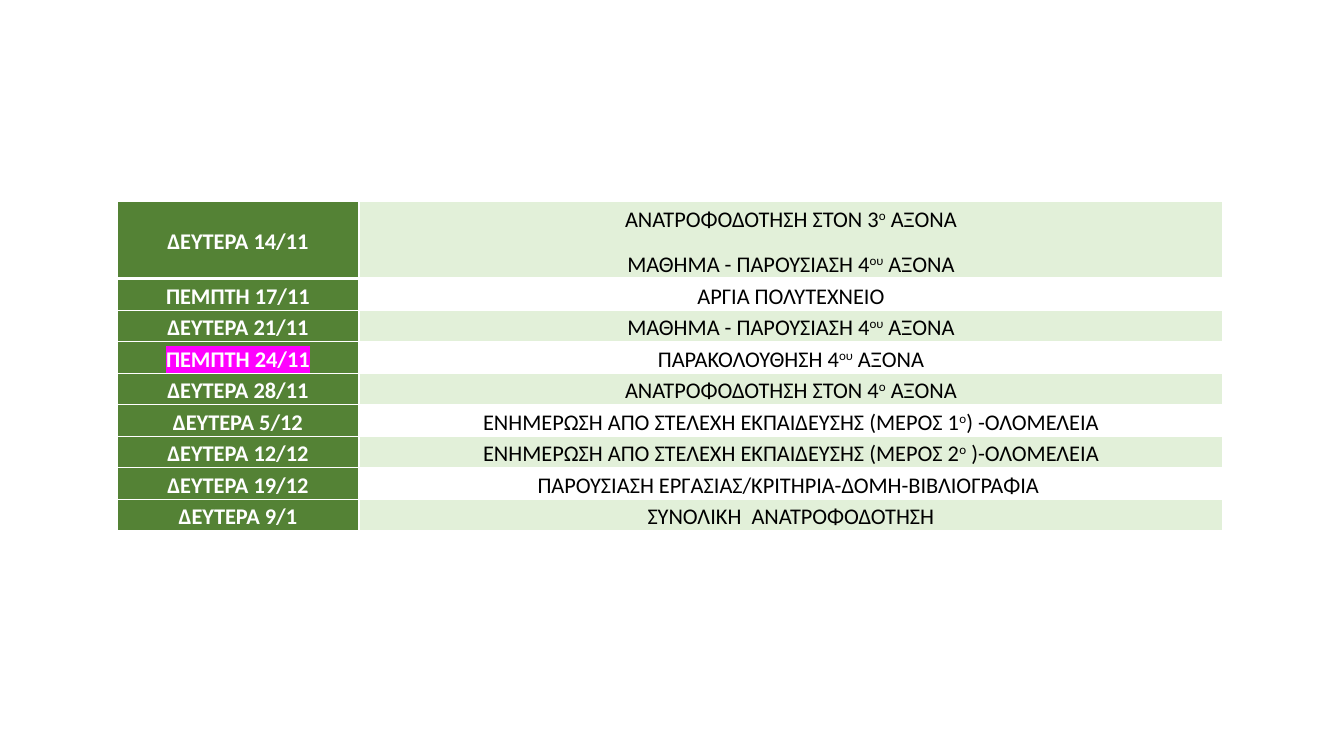
from pptx import Presentation
from pptx.dml.color import RGBColor
from pptx.enum.text import MSO_ANCHOR, PP_ALIGN
from pptx.oxml import parse_xml
from pptx.oxml.ns import nsdecls
from pptx.util import Inches, Pt

# Date, then the lines of the activity; text between ^ marks is superscript
SCHEDULE = [
    ("ΔΕΥΤΕΡΑ 14/11", ["ΑΝΑΤΡΟΦΟΔΟΤΗΣΗ ΣΤΟΝ 3^ο^ ΑΞΟΝΑ", "ΜΑΘΗΜΑ - ΠΑΡΟΥΣΙΑΣΗ 4^ου^ ΑΞΟΝΑ"]),
    ("ΠΕΜΠΤΗ 17/11", ["ΑΡΓΙΑ ΠΟΛΥΤΕΧΝΕΙΟ"]),
    ("ΔΕΥΤΕΡΑ 21/11", ["ΜΑΘΗΜΑ - ΠΑΡΟΥΣΙΑΣΗ 4^ου^ ΑΞΟΝΑ"]),
    ("ΠΕΜΠΤΗ 24/11", ["ΠΑΡΑΚΟΛΟΥΘΗΣΗ 4^ου^ ΑΞΟΝΑ"]),
    ("ΔΕΥΤΕΡΑ 28/11", ["ΑΝΑΤΡΟΦΟΔΟΤΗΣΗ ΣΤΟΝ 4^ο^ ΑΞΟΝΑ"]),
    ("ΔΕΥΤΕΡΑ 5/12", ["ΕΝΗΜΕΡΩΣΗ ΑΠΟ ΣΤΕΛΕΧΗ ΕΚΠΑΙΔΕΥΣΗΣ (ΜΕΡΟΣ 1^ο^) -ΟΛΟΜΕΛΕΙΑ"]),
    ("ΔΕΥΤΕΡΑ 12/12", ["ΕΝΗΜΕΡΩΣΗ ΑΠΟ ΣΤΕΛΕΧΗ ΕΚΠΑΙΔΕΥΣΗΣ (ΜΕΡΟΣ 2^ο^ )-ΟΛΟΜΕΛΕΙΑ"]),
    ("ΔΕΥΤΕΡΑ 19/12", ["ΠΑΡΟΥΣΙΑΣΗ ΕΡΓΑΣΙΑΣ/ΚΡΙΤΗΡΙΑ-ΔΟΜΗ-ΒΙΒΛΙΟΓΡΑΦΙΑ "]),
    ("ΔΕΥΤΕΡΑ 9/1", ["ΣΥΝΟΛΙΚΗ  ΑΝΑΤΡΟΦΟΔΟΤΗΣΗ"]),
]
HIGHLIGHTED_DATE = "ΠΕΜΠΤΗ 24/11"
GREEN, PALE_GREEN, WHITE, BLACK, MAGENTA = "548235", "E2F0D9", "FFFFFF", "000000", "FF00FF"
LEFT, TOP = 1.16, 2
COLUMN_WIDTHS = [2.4, 8.57]
ROW_HEIGHT = 0.27
SPECIAL_HEIGHTS = {0: 0.69, 3: 0.22}


def color(hex_string):
    return RGBColor.from_string(hex_string)


def set_borders(cell, top, bottom):
    """Draw white borders; top and bottom are widths in points."""
    properties = cell._tc.get_or_add_tcPr()
    for side, width in (("L", 1), ("R", 1), ("T", top), ("B", bottom)):
        properties.append(parse_xml(
            f'<a:ln{side} {nsdecls("a")} w="{Pt(width)}"><a:solidFill>'
            f'<a:srgbClr val="{WHITE}"/></a:solidFill></a:ln{side}>'))


def highlight(run):
    fill = run._r.get_or_add_rPr().find("{*}solidFill")
    fill.addnext(parse_xml(
        f'<a:highlight {nsdecls("a")}><a:srgbClr val="{MAGENTA}"/></a:highlight>'))


def write_lines(cell, lines, text_color, bold):
    cell.vertical_anchor = MSO_ANCHOR.MIDDLE
    cell.margin_left = cell.margin_right = Inches(0.05)
    cell.margin_top = cell.margin_bottom = 0
    frame = cell.text_frame
    for number, line in enumerate(lines):
        paragraph = frame.add_paragraph() if number else frame.paragraphs[0]
        paragraph.alignment = PP_ALIGN.CENTER
        paragraph.line_spacing = 1.15
        paragraph.space_after = Pt(10)
        for part, text in enumerate(line.split("^")):
            run = paragraph.add_run()
            run.text = text
            run.font.name = "Calibri"
            run.font.size = Pt(16)
            run.font.bold = bold
            run.font.color.rgb = color(text_color)
            if part % 2:
                run._r.get_or_add_rPr().set("baseline", "30000")
            if text == HIGHLIGHTED_DATE:
                highlight(run)


def main():
    prs = Presentation()
    prs.slide_width, prs.slide_height = Inches(13.33), Inches(7.5)
    slide = prs.slides.add_slide(prs.slide_layouts[6])

    heights = [SPECIAL_HEIGHTS.get(row, ROW_HEIGHT) for row in range(len(SCHEDULE))]
    schedule = slide.shapes.add_table(
        len(SCHEDULE), len(COLUMN_WIDTHS), Inches(LEFT), Inches(TOP),
        Inches(sum(COLUMN_WIDTHS)), Inches(sum(heights))).table
    for column, width in zip(schedule.columns, COLUMN_WIDTHS):
        column.width = Inches(width)

    for row, (date, activity) in enumerate(SCHEDULE):
        schedule.rows[row].height = Inches(heights[row])
        band = WHITE if row % 2 else PALE_GREEN
        columns = [([date], GREEN, WHITE, True), (activity, band, BLACK, False)]
        for column, (lines, fill, text_color, bold) in enumerate(columns):
            cell = schedule.cell(row, column)
            set_borders(cell, top=3 if row == 1 else 1, bottom=3 if row == 0 else 1)
            cell.fill.solid()
            cell.fill.fore_color.rgb = color(fill)
            write_lines(cell, lines, text_color, bold)

    prs.save("out.pptx")


if __name__ == "__main__":
    main()
